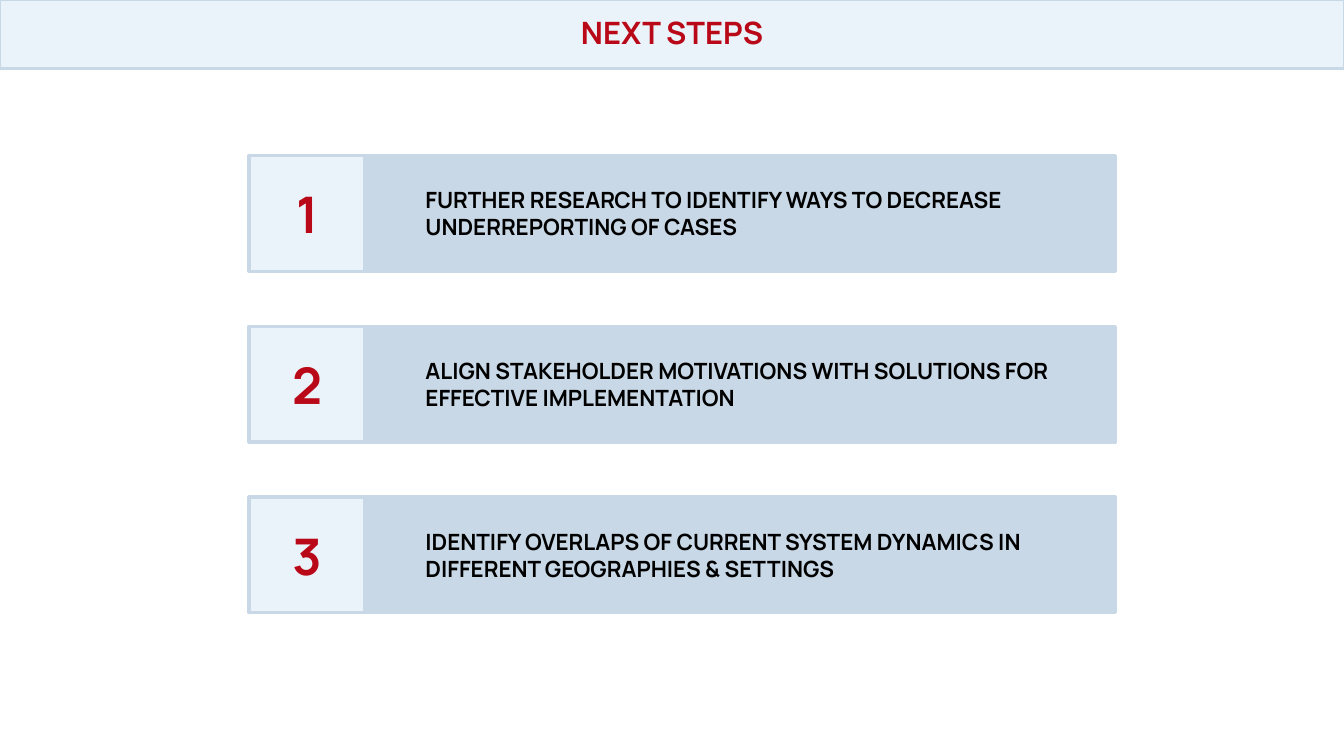
from pptx import Presentation
from pptx.dml.color import RGBColor
from pptx.enum import shapes, text
from pptx.util import Inches, Pt

PALE = RGBColor(0xEB, 0xF3, 0xFA)
BLUE = RGBColor(0xC8, 0xD8, 0xE6)
RED = RGBColor(0xB9, 0x09, 0x18)
BLACK = RGBColor(0, 0, 0)

STEPS = [
    "FURTHER RESEARCH TO IDENTIFY WAYS TO DECREASE UNDERREPORTING OF CASES",
    "ALIGN STAKEHOLDER MOTIVATIONS WITH SOLUTIONS FOR EFFECTIVE IMPLEMENTATION",
    "IDENTIFY OVERLAPS OF CURRENT SYSTEM DYNAMICS IN DIFFERENT GEOGRAPHIES & SETTINGS",
]
LEFT, TOP, SIDE, PITCH, BAR_WIDTH = 2.47, 1.54, 1.15, 1.695, 7.44


def style(box, words, fill, line_width, align, font):
    box.fill.solid()
    box.fill.fore_color.rgb = fill
    box.line.color.rgb = BLUE
    box.line.width = Pt(line_width)
    frame = box.text_frame
    frame.text = words
    frame.word_wrap = True
    frame.vertical_anchor = text.MSO_ANCHOR.MIDDLE
    paragraph = frame.paragraphs[0]
    paragraph.alignment = align
    run_font = paragraph.runs[0].font
    run_font.color.rgb = font["color"]
    for name, value in {"name": "Manrope", "bold": True, "size": Pt(font["size"])}.items():
        setattr(run_font, name, value)
    return paragraph


deck = Presentation()
deck.slide_width, deck.slide_height = Inches(13.33), Inches(7.5)
slide = deck.slides.add_slide(deck.slide_layouts[5])

# Title band across the top
title = slide.shapes.title
title.left, title.top, title.width, title.height = 0, 0, deck.slide_width, Inches(0.68)
heading = style(title, "NEXT STEPS", PALE, 1.5, text.PP_ALIGN.CENTER,
                {"size": 22, "color": RED})
heading.line_spacing = 0.9

# Numbered steps: a number box joined to a text bar
for index, step in enumerate(STEPS):
    top = Inches(TOP + index * PITCH)
    number = slide.shapes.add_shape(shapes.MSO_SHAPE.RECTANGLE,
                                    Inches(LEFT), top, Inches(SIDE), Inches(SIDE))
    style(number, str(index + 1), PALE, 2.25, text.PP_ALIGN.CENTER,
          {"size": 36, "color": RED})
    bar = slide.shapes.add_shape(shapes.MSO_SHAPE.RECTANGLE,
                                 Inches(LEFT + SIDE), top, Inches(BAR_WIDTH), Inches(SIDE))
    style(bar, step, BLUE, 2.25, text.PP_ALIGN.LEFT, {"size": 16, "color": BLACK})
    bar.text_frame.margin_left = Inches(0.6)
    for part in (number, bar):
        part.shadow.inherit = False

deck.save("out.pptx")
